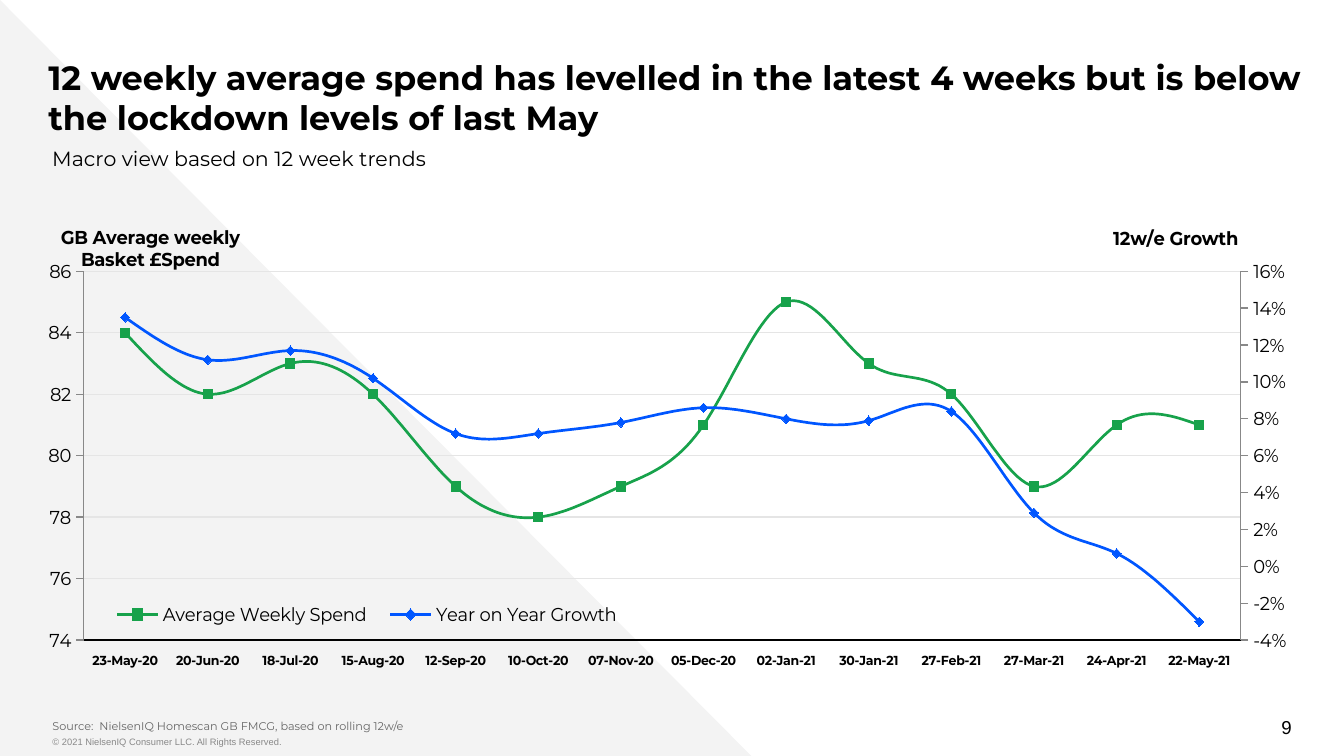
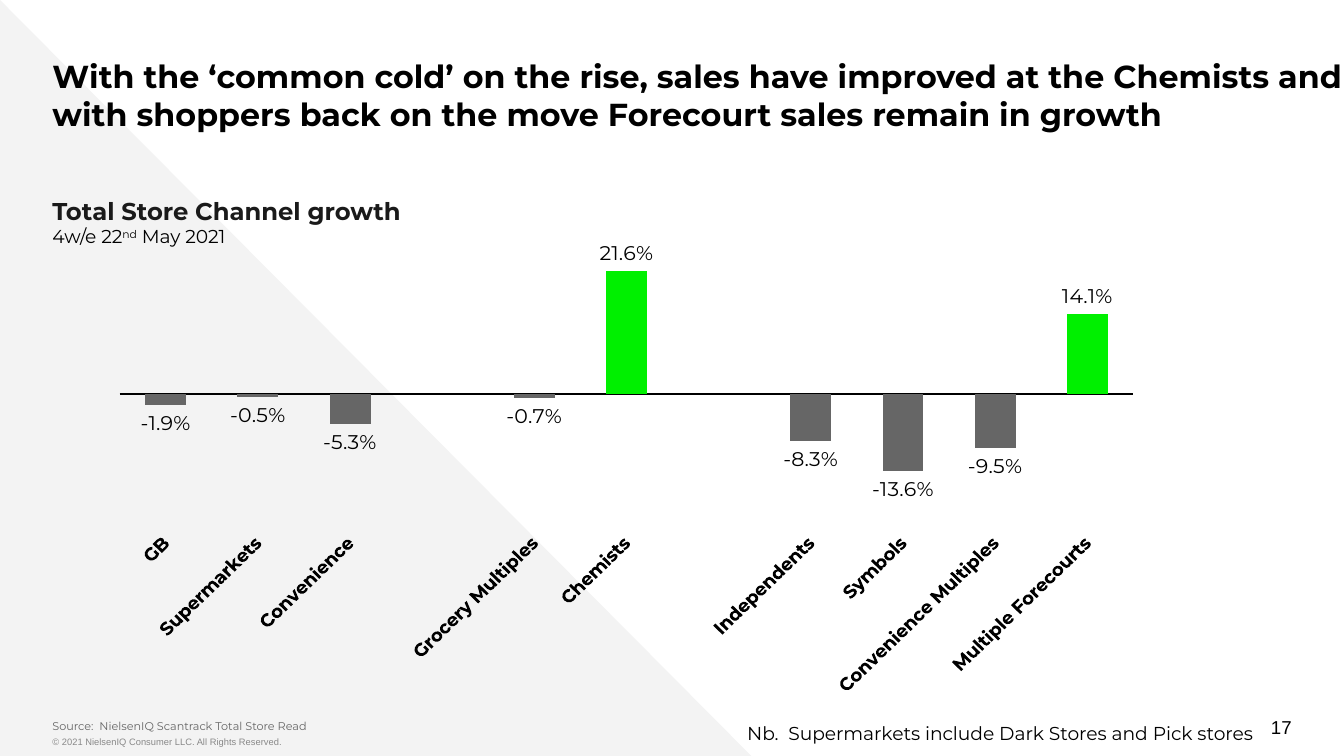
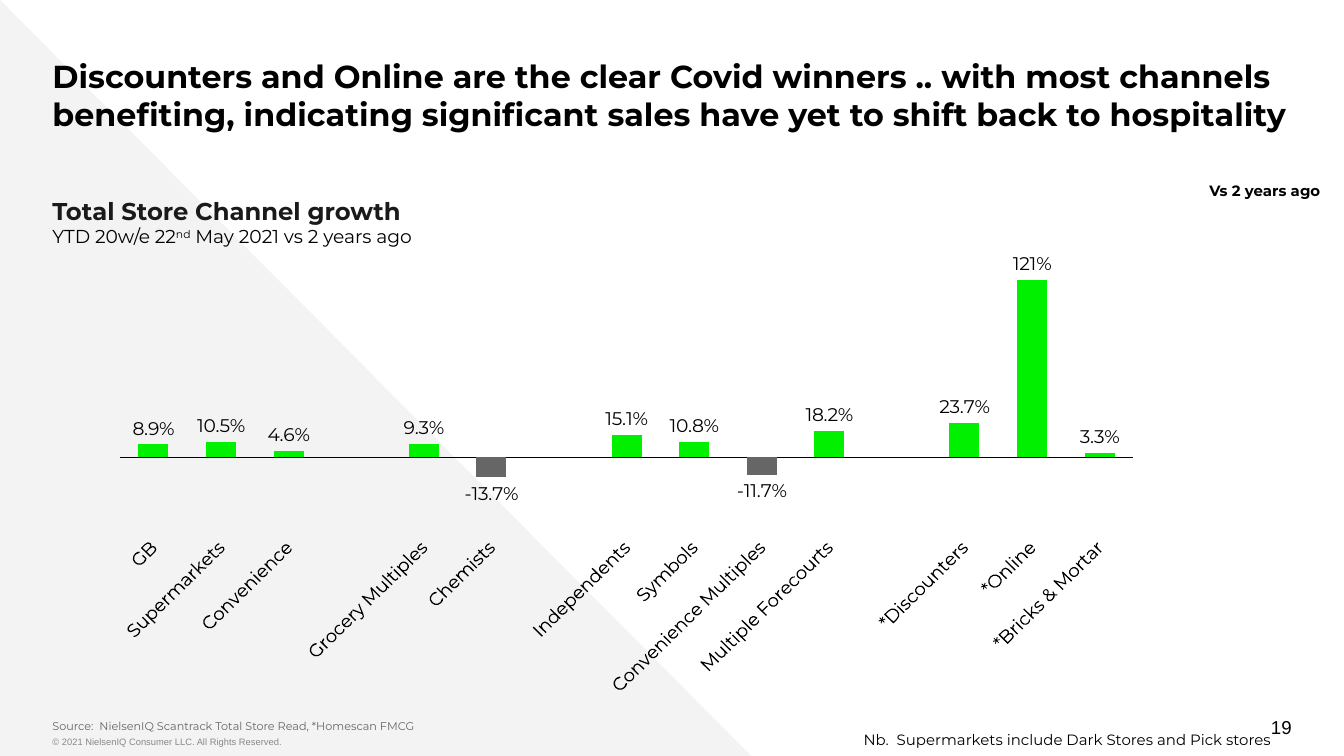
from copy import deepcopy

from lxml.etree import SubElement
from pptx import Presentation
from pptx.chart.axis import ValueAxis
from pptx.chart.data import CategoryChartData
from pptx.dml.color import RGBColor
from pptx.enum.chart import (
    XL_CHART_TYPE, XL_LABEL_POSITION, XL_LEGEND_POSITION,
    XL_TICK_LABEL_POSITION, XL_TICK_MARK,
)
from pptx.enum.shapes import MSO_SHAPE
from pptx.enum.text import MSO_ANCHOR, PP_ALIGN
from pptx.oxml import parse_xml
from pptx.oxml.ns import nsdecls, qn
from pptx.util import Inches, Pt

COLUMNS = 100
BLACK = "000000"
CHARCOAL = "1A1A1A"
GREY = "666666"
PALE_GREY = "888888"
GRID_GREY = "E5E5E5"
BAND_GREY = "F3F3F3"
SPEND_GREEN = "17A24B"
GROWTH_BLUE = "0056FF"
RISE_GREEN = "00F000"

CHANNELS = [
    "GB", "Supermarkets", "Convenience", "", "Grocery Multiples", "Chemists", "",
    "Independents", "Symbols", "Convenience Multiples", "Multiple Forecourts",
]
STORES_NOTE = "Nb.  Supermarkets include Dark Stores and Pick stores"


def colour(hex_string):
    return RGBColor.from_string(hex_string)


def set_layout(parent, index, x, y, width=None, height=None, inner=False):
    for old_layout in parent.findall(qn("c:layout")):
        parent.remove(old_layout)
    layout = parse_xml(f"<c:layout {nsdecls('c')}/>")
    parent.insert(index, layout)
    manual = SubElement(layout, qn("c:manualLayout"))
    values = [("layoutTarget", "inner" if inner else None), ("xMode", "edge"),
              ("yMode", "edge"), ("x", x), ("y", y), ("w", width), ("h", height)]
    for name, value in values:
        if value is not None:
            SubElement(manual, qn(f"c:{name}")).set("val", str(value))


class Deck:
    font_name = "Montserrat"
    footer_font = "Arial"

    def __init__(self):
        self.presentation = Presentation()
        self.presentation.slide_width = Inches(10)
        self.presentation.slide_height = Inches(5.625)
        self.cell = self.presentation.slide_width / COLUMNS
        self.slide = None

    def place(self, *lengths):
        return [round(length * self.cell) for length in lengths]

    def style(self, font, size, hex_string=BLACK, bold=False, name=None):
        font.name = name or self.font_name
        font.size = Pt(size)
        font.bold = bold
        font.color.rgb = colour(hex_string)

    def new_slide(self, number, title, title_size, title_left, source):
        self.slide = self.presentation.slides.add_slide(self.presentation.slide_layouts[6])
        self.band()
        self.text((3.9, 54.3, 55.4, 2),
                  [("© 2021 NielsenIQ Consumer LLC. All Rights Reserved.", 5, PALE_GREY)],
                  insets=(0, 0.5), name=self.footer_font)
        self.text((73.6, 52.6, 22.5, 3), [(number, 10)], insets=(0, 0.5),
                  align=PP_ALIGN.RIGHT, anchor=MSO_ANCHOR.MIDDLE, name=self.footer_font)
        self.text((title_left, 3.2, 96.4, 7.2), [(title, title_size, BLACK, True)], insets=(0, 1))
        self.text((3.9, 53, 89.2, 2), [(source, 6, GREY)], insets=(0, 1),
                  anchor=MSO_ANCHOR.BOTTOM)

    def band(self):
        shape = self.slide.shapes.add_shape(
            MSO_SHAPE.RIGHT_TRIANGLE, *self.place(0, 0, 55.9, 56.25))
        shape.shadow.inherit = False
        shape.fill.solid()
        shape.fill.fore_color.rgb = colour(BAND_GREY)
        shape.line.fill.background()

    def text(self, box, runs, insets=(1, 0.5), align=PP_ALIGN.LEFT,
             anchor=MSO_ANCHOR.TOP, wrap=True, name=None):
        frame = self.slide.shapes.add_textbox(*self.place(*box)).text_frame
        frame.word_wrap = wrap
        frame.vertical_anchor = anchor
        side, end = self.place(*insets)
        frame.margin_left = frame.margin_right = side
        frame.margin_top = frame.margin_bottom = end
        paragraph = frame.paragraphs[0]
        paragraph.alignment = align
        for words, *look in runs:
            run = paragraph.add_run()
            run.text = words
            self.style(run.font, *look, name=name)
        return paragraph

    def channel_heading(self, before, after):
        paragraph = self.text((3.9, 14.1, 41.6, 4.9),
                              [("Total Store Channel growth", 13, CHARCOAL, True)],
                              insets=(0, 0.5))
        paragraph.add_line_break()
        for words, baseline in [(before, 0), ("nd", 30000), (after, 0)]:
            run = paragraph.add_run()
            run.text = words
            self.style(run.font, 10)
            if baseline:
                run._r.get_or_add_rPr().set("baseline", str(baseline))

    def chart(self, kind, box, categories, series, plot_area):
        data = CategoryChartData()
        data.categories = categories
        for name, values in series:
            data.add_series(name, values)
        chart = self.slide.shapes.add_chart(kind, *self.place(*box), data).chart
        chart.has_title = False
        chart.has_legend = False
        chart.plots[0].vary_by_categories = False
        self.style(chart.font, 10)
        set_layout(chart.element.find(".//" + qn("c:plotArea")), 0, *plot_area, inner=True)
        axis = chart.category_axis
        axis.tick_label_position = XL_TICK_LABEL_POSITION.LOW
        axis.major_tick_mark = XL_TICK_MARK.NONE
        axis.has_major_gridlines = False
        self.line(axis.format.line, BLACK, 0.75)
        return chart

    def line(self, line, hex_string, width):
        line.color.rgb = colour(hex_string)
        line.width = Pt(width)

    def value_axis(self, axis, title, title_place, scale, number_format):
        axis.minimum_scale, axis.maximum_scale, axis.major_unit = scale
        axis.major_tick_mark = XL_TICK_MARK.OUTSIDE
        axis.tick_labels.number_format = number_format
        axis.tick_labels.number_format_is_linked = False
        self.style(axis.tick_labels.font, 10)
        self.line(axis.format.line, PALE_GREY, 0.75)
        axis.has_title = True
        paragraph = axis.axis_title.text_frame.paragraphs[0]
        run = paragraph.runs[0] if paragraph.runs else paragraph.add_run()
        run.text = title
        self.style(run.font, 10, bold=True)
        element = axis.axis_title.element
        body = element.find(".//" + qn("a:bodyPr"))
        body.set("rot", "0")
        body.set("vert", "horz")
        set_layout(element, 1, *title_place)

    def right_axis(self, chart):
        plot_area = chart.element.find(".//" + qn("c:plotArea"))
        left_plot = plot_area.find(qn("c:lineChart"))
        right_plot = deepcopy(left_plot)
        left_plot.remove(left_plot.findall(qn("c:ser"))[1])
        right_plot.remove(right_plot.findall(qn("c:ser"))[0])
        left_plot.addnext(right_plot)
        category = deepcopy(plot_area.find(qn("c:catAx")))
        value = deepcopy(plot_area.find(qn("c:valAx")))
        category_id, value_id = "5001", "5002"
        for reference, identity in zip(right_plot.findall(qn("c:axId")),
                                       (category_id, value_id)):
            reference.set("val", identity)
        for axis, identity, crossing in [(category, category_id, value_id),
                                         (value, value_id, category_id)]:
            axis.find(qn("c:axId")).set("val", identity)
            axis.find(qn("c:crossAx")).set("val", crossing)
        category.find(qn("c:delete")).set("val", "1")
        value.find(qn("c:axPos")).set("val", "r")
        value.find(qn("c:crosses")).set("val", "max")
        plot_area.find(qn("c:valAx")).addnext(value)
        value.addnext(category)
        axis = ValueAxis(value)
        axis.has_major_gridlines = False
        return axis

    def trend_chart(self, categories, series, colours):
        chart = self.chart(XL_CHART_TYPE.LINE, (3.6, 15.1, 92.1, 36.9), categories, series,
                           (0.027, 0.138, 0.973, 0.744))
        self.style(chart.category_axis.tick_labels.font, 7, bold=True)
        for line_series, hex_string in zip(chart.plots[0].series, colours):
            line_series.smooth = True
            line_series.marker.style = None
            self.line(line_series.format.line, hex_string, 1.5)
        axis = chart.value_axis
        axis.has_major_gridlines = True
        self.line(axis.major_gridlines.format.line, GRID_GREY, 0.75)
        self.value_axis(axis, "GB Average weekly Basket £Spend", (0.005, 0.035),
                        (74, 86, 2), "0")
        self.value_axis(self.right_axis(chart), "12w/e Growth", (0.89, 0.037),
                        (-0.04, 0.16, 0.02), "0%")
        chart.has_legend = True
        chart.legend.position = XL_LEGEND_POSITION.BOTTOM
        chart.legend.include_in_layout = False
        self.style(chart.legend.font, 10)
        set_layout(chart.legend._element, 1, 0.04, 0.89 - 0.1, 0.45, 0.08)

    def channel_chart(self, categories, values, scale, label_size, bold_names):
        chart = self.chart(XL_CHART_TYPE.COLUMN_CLUSTERED, (8.2, 16.6, 78.5, 35.2),
                           categories, [("Series 1", values)], (0.009, 0.063, 0.961, 0.585))
        self.style(chart.category_axis.tick_labels.font, 10, bold=bold_names)
        body = chart.element.find(".//" + qn("c:catAx") + "/" + qn("c:txPr")
                                  + "/" + qn("a:bodyPr"))
        body.set("rot", "-2700000")
        body.set("vert", "horz")
        axis = chart.value_axis
        axis.minimum_scale, axis.maximum_scale = scale
        axis.has_major_gridlines = False
        axis.visible = False
        plot = chart.plots[0]
        plot.gap_width = 125
        bars = plot.series[0]
        bars.invert_if_negative = False
        bars.format.fill.solid()
        bars.format.fill.fore_color.rgb = colour(GREY)
        for index, value in enumerate(values):
            if value is not None and value > 0:
                fill = bars.points[index].format.fill
                fill.solid()
                fill.fore_color.rgb = colour(RISE_GREEN)
        labels = bars.data_labels
        labels.show_value = True
        labels.position = XL_LABEL_POSITION.OUTSIDE_END
        labels.number_format = "0.0%"
        labels.number_format_is_linked = False
        self.style(labels.font, label_size)
        return chart

    def whole_percent_label(self, chart, index, size):
        label = chart.plots[0].series[0].points[index].data_label
        self.style(label.font, size)
        label.position = XL_LABEL_POSITION.OUTSIDE_END
        number_format = parse_xml(
            f'<c:numFmt {nsdecls("c")} formatCode="0%" sourceLinked="0"/>')
        chart.element.find(".//" + qn("c:dLbl") + "/" + qn("c:idx")).addnext(number_format)


def spend_slide(deck):
    deck.new_slide(
        "9", "12 weekly average spend has levelled in the latest 4 weeks but is below "
        "the lockdown levels of last May", 18, 3.6,
        "Source:  NielsenIQ Homescan GB FMCG, based on rolling 12w/e")
    periods = [
        "23-May-20", "20-Jun-20", "18-Jul-20", "15-Aug-20", "12-Sep-20", "10-Oct-20",
        "07-Nov-20", "05-Dec-20", "02-Jan-21", "30-Jan-21", "27-Feb-21", "27-Mar-21",
        "24-Apr-21", "22-May-21",
    ]
    spend = [84, 82, 83, 82, 79, 78, 79, 81, 85, 83, 82, 79, 81, 81]
    growth = [0.135, 0.112, 0.117, 0.102, 0.072, 0.072, 0.078,
              0.086, 0.08, 0.079, 0.084, 0.029, 0.007, -0.03]
    deck.trend_chart(periods,
                     [("Average Weekly Spend", spend), ("Year on Year Growth", growth)],
                     [SPEND_GREEN, GROWTH_BLUE])
    deck.text((2.9, 10.4, 50, 2.9), [("Macro view based on 12 week trends", 11)])


def four_week_slide(deck):
    deck.new_slide(
        "17", "With the ‘common cold’ on the rise, sales have improved at the Chemists "
        "and with shoppers back on the move Forecourt sales remain in growth", 17, 3.9,
        "Source:  NielsenIQ Scantrack Total Store Read")
    deck.channel_heading("4w/e 22", " May 2021")
    changes = [-0.019, -0.005, -0.053, None, -0.007, 0.216, None,
               -0.083, -0.136, -0.095, 0.141]
    deck.channel_chart(CHANNELS, changes, (-0.22, 0.25), 11, True)
    deck.text((53.6, 53.2, 40.6, 2.7), [(STORES_NOTE, 10)], align=PP_ALIGN.RIGHT, wrap=False)


def two_year_slide(deck):
    deck.new_slide(
        "19", "Discounters and Online are the clear Covid winners .. with most channels "
        "benefiting, indicating significant sales have yet to shift back to hospitality", 17,
        3.9, "Source:  NielsenIQ Scantrack Total Store Read, *Homescan FMCG")
    deck.channel_heading("YTD 20w/e 22", " May 2021 vs 2 years ago")
    categories = CHANNELS + ["", "*Discounters", "*Online", "*Bricks & Mortar"]
    changes = [0.089, 0.105, 0.046, None, 0.093, -0.137, None, 0.151, 0.108, -0.117,
               0.182, None, 0.237, 1.21, 0.033]
    chart = deck.channel_chart(categories, changes, (-0.45, 1.4), 10, False)
    deck.whole_percent_label(chart, categories.index("*Online"), 10)
    deck.text((62.9, 53.9, 32.7, 2.4), [(STORES_NOTE, 8)], align=PP_ALIGN.RIGHT, wrap=False)
    deck.text((89, 13, 10.4, 2.4), [("Vs 2 years ago", 8, BLACK, True)], wrap=False)


def main():
    deck = Deck()
    for build in (spend_slide, four_week_slide, two_year_slide):
        build(deck)
    deck.presentation.save("out.pptx")


if __name__ == "__main__":
    main()
